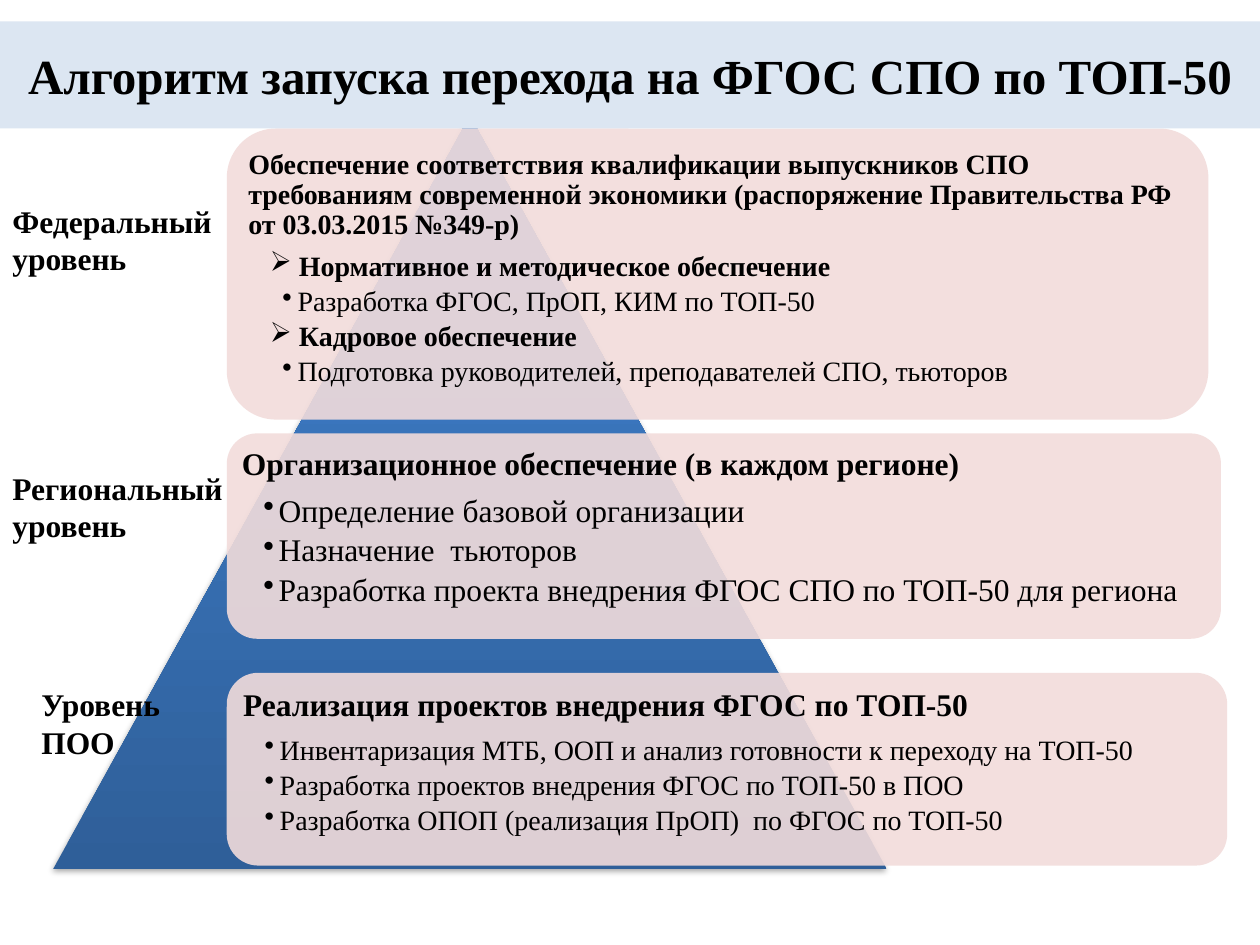
from copy import deepcopy

from lxml import etree
from pptx import Presentation
from pptx.dml.color import RGBColor
from pptx.enum import shapes, text
from pptx.oxml.ns import qn
from pptx.util import Inches, Pt

FONT = "Times New Roman"
COLORS = {"text": "000000", "banner": "DCE6F2", "panel": "F2DCDB", "shadow": "000000"}
PYRAMID_STOPS = [(0, "2F5F99"), (0.8, "3D7CC7"), (1, "3A7CCB")]

TITLE = "Алгоритм запуска перехода на ФГОС СПО по ТОП-50"
LEVEL_LABELS = [
    ("Федеральный уровень", (0, 1.55, 1.87, 0.71)),
    ("Региональный уровень", (0, 3.67, 1.87, 0.71)),
    ("Уровень ПОО", (0.23, 5.39, 1.64, 0.71)),
]
# Each line: text, indent level, bullet, size, bold
PANELS = [
    {"box": (1.8, 1.02, 7.79, 2.31), "radius": 0.39, "inset": 0.17, "lines": [
        ("Обеспечение соответствия квалификации выпускников СПО требованиям современной "
         "экономики (распоряжение Правительства РФ от 03.03.2015 №349-р)", 0, None, 16, True),
        (" Нормативное и методическое обеспечение", 1, "➢", 16, True),
        ("Разработка ФГОС, ПрОП, КИМ по ТОП-50", 2, "•", 16, False),
        (" Кадровое обеспечение", 1, "➢", 16, True),
        ("Подготовка руководителей, преподавателей СПО, тьюторов", 2, "•", 16, False),
    ]},
    {"box": (1.8, 3.44, 7.89, 1.63), "radius": 0.24, "inset": 0.12, "lines": [
        ("Организационное обеспечение (в каждом регионе)", 0, None, 18, True),
        ("Определение базовой организации", 1, "•", 18, False),
        ("Назначение  тьюторов", 1, "•", 18, False),
        ("Разработка проекта внедрения ФГОС СПО по ТОП-50 для региона", 1, "•", 18, False),
    ]},
    {"box": (1.8, 5.34, 7.94, 1.53), "radius": 0.25, "inset": 0.13, "lines": [
        ("Реализация проектов внедрения ФГОС по ТОП-50", 0, None, 18, True),
        ("Инвентаризация МТБ, ООП и анализ готовности к переходу на ТОП-50", 1, "•", 16, False),
        ("Разработка проектов внедрения ФГОС по ТОП-50 в ПОО", 1, "•", 16, False),
        ("Разработка ОПОП (реализация ПрОП)  по ФГОС по ТОП-50", 1, "•", 16, False),
    ]},
]
LEFT_INDENT = {1: 0.29, 2: 0.39}
HANGING = 0.12
LINE_HEIGHT = 1.15  # natural line height of the font, in ems
CORNER_INSET = 0.29  # share of the radius that a rounded rectangle adds to its margins


def inches(box):
    return [Inches(value) for value in box]


def set_font(paragraph, size, bold=True):
    font = paragraph.font
    font.name, font.size, font.bold = FONT, Pt(size), bold
    font.color.rgb = RGBColor.from_string(COLORS["text"])


def fill_solid(shape, color):
    shape.fill.solid()
    shape.fill.fore_color.rgb = RGBColor.from_string(color)
    shape.line.fill.background()


def add_bullet(paragraph, character, level):
    paragraph.level = level
    properties = paragraph._p.get_or_add_pPr()
    properties.set("marL", str(Inches(LEFT_INDENT[level])))
    properties.set("indent", str(-Inches(HANGING)))
    bullet = etree.Element(qn("a:buChar"), char=character)
    # Bullets come after the spacing and before the default run properties
    properties.find(qn("a:defRPr")).addprevious(bullet)


def add_pyramid(slide):
    pyramid = slide.shapes.add_shape(
        shapes.MSO_SHAPE.ISOSCELES_TRIANGLE, *inches((0.42, 0.92, 6.62, 5.98)))
    pyramid.line.fill.background()
    pyramid.fill.gradient()
    pyramid.fill.gradient_angle = 90
    stop_list = pyramid.element.spPr.find(".//" + qn("a:gsLst"))
    stop_list.append(deepcopy(stop_list[-1]))
    for stop, (position, color) in zip(pyramid.fill.gradient_stops, PYRAMID_STOPS):
        stop.position = position
        stop.color.rgb = RGBColor.from_string(color)

    pyramid.shadow.inherit = False
    effects = pyramid.element.spPr.find(qn("a:effectLst"))
    shadow = etree.SubElement(
        effects, qn("a:outerShdw"), blurRad=str(Pt(3.1)), dist=str(Pt(1.8)),
        dir="5400000", rotWithShape="0")
    color = etree.SubElement(shadow, qn("a:srgbClr"), val=COLORS["shadow"])
    etree.SubElement(color, qn("a:alpha"), val="35000")


def add_panel(slide, box, radius, inset, lines):
    panel = slide.shapes.add_shape(shapes.MSO_SHAPE.ROUNDED_RECTANGLE, *inches(box))
    panel.adjustments[0] = radius / min(box[2:])
    panel.shadow.inherit = False
    fill_solid(panel, COLORS["panel"])
    color = panel.element.spPr.find(qn("a:solidFill")).find(qn("a:srgbClr"))
    etree.SubElement(color, qn("a:alpha"), val="90000")

    frame = panel.text_frame
    frame.word_wrap = True
    frame.vertical_anchor = text.MSO_ANCHOR.TOP
    margin = Inches(inset - CORNER_INSET * radius)
    frame.margin_left = frame.margin_right = margin
    frame.margin_top = frame.margin_bottom = margin
    for index, (content, level, bullet, size, bold) in enumerate(lines):
        paragraph = frame.add_paragraph() if index else frame.paragraphs[0]
        paragraph.text = content
        paragraph.alignment = text.PP_ALIGN.LEFT
        paragraph.line_spacing = 0.9
        gap = 0.15 if bullet else 0.35
        paragraph.space_after = Pt(round(gap * size * LINE_HEIGHT, 1))
        set_font(paragraph, size, bold)
        if bullet:
            add_bullet(paragraph, bullet, level)


def add_label(slide, content, box):
    frame = slide.shapes.add_textbox(*inches(box)).text_frame
    frame.word_wrap = True
    frame.auto_size = text.MSO_AUTO_SIZE.SHAPE_TO_FIT_TEXT
    frame.text = content
    set_font(frame.paragraphs[0], 18)


def format_title(slide):
    title = slide.shapes.title
    title.left, title.top, title.width, title.height = inches((0, 0.17, 10, 0.85))
    fill_solid(title, COLORS["banner"])
    frame = title.text_frame
    frame.text = TITLE
    frame.auto_size = text.MSO_AUTO_SIZE.NONE
    frame.vertical_anchor = text.MSO_ANCHOR.MIDDLE
    frame.paragraphs[0].alignment = text.PP_ALIGN.CENTER
    set_font(frame.paragraphs[0], 28)
    # The banner covers the tip of the pyramid
    title.element.getparent().append(title.element)


def main():
    presentation = Presentation()
    presentation.slide_width, presentation.slide_height = Inches(10), Inches(7.5)
    slide = presentation.slides.add_slide(presentation.slide_layouts[5])
    add_pyramid(slide)
    for panel in PANELS:
        add_panel(slide, **panel)
    for content, box in LEVEL_LABELS:
        add_label(slide, content, box)
    format_title(slide)
    presentation.save("out.pptx")


if __name__ == "__main__":
    main()
